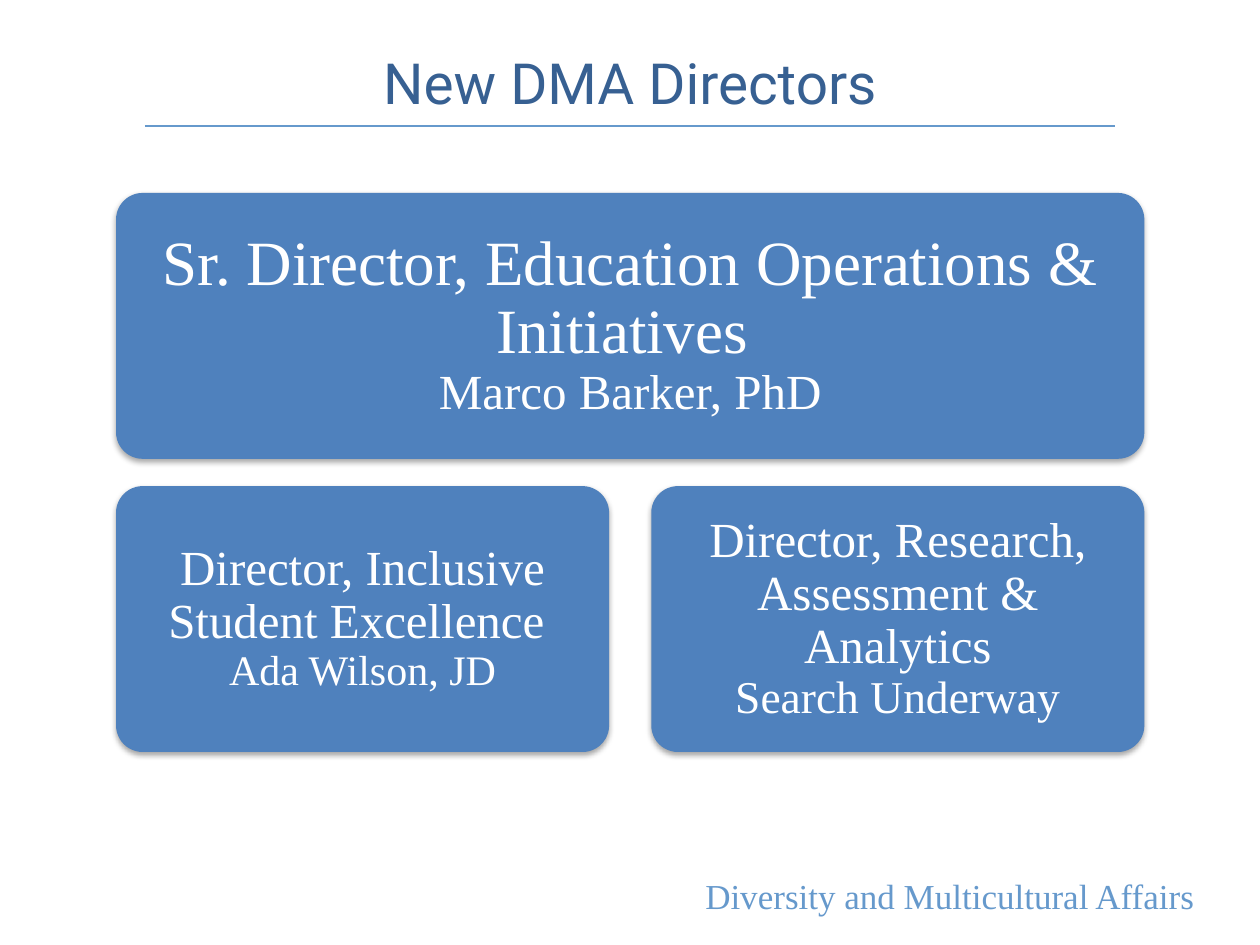
from lxml import etree
from pptx import Presentation
from pptx import util as u
from pptx.dml.color import RGBColor
from pptx.enum import shapes, text
from pptx.oxml import parse_xml
from pptx.oxml.ns import nsdecls, qn

BLUE = RGBColor(0x4F, 0x81, 0xBD)
DARK_BLUE = RGBColor(0x37, 0x60, 0x92)
LIGHT_BLUE = RGBColor(0x66, 0x99, 0xCC)
WHITE = RGBColor(0xFF, 0xFF, 0xFF)
SERIF, SANS = "Times New Roman", "Roboto"

SHADOW = (
    f'<a:effectLst {nsdecls("a")}>'
    '<a:outerShdw blurRad="40000" dist="23000" dir="5400000" rotWithShape="0">'
    '<a:srgbClr val="000000"><a:alpha val="35000"/></a:srgbClr>'
    '</a:outerShdw></a:effectLst>'
)


class DirectorsSlide:
    """Holds the style and the slide being built."""

    def __init__(self, presentation):
        self.slide = presentation.slides.add_slide(presentation.slide_layouts[5])

    def format_frame(self, frame, inset, **values):
        settings = {
            "word_wrap": True,
            "auto_size": text.MSO_AUTO_SIZE.NONE,
            "vertical_anchor": text.MSO_ANCHOR.MIDDLE,
            **dict.fromkeys(("margin_left", "margin_right", "margin_top", "margin_bottom"), u.Cm(inset)),
            **values,
        }
        for name, value in settings.items():
            setattr(frame, name, value)

    def add_run(self, paragraph, wording, size, color, font=SERIF):
        run = paragraph.add_run()
        run.text = wording
        for name, value in {"name": font, "size": u.Pt(size)}.items():
            setattr(run.font, name, value)
        run.font.color.rgb = color

    def title(self, wording, left, top, width, height):
        shape = self.slide.shapes.title
        position = {"left": left, "top": top, "width": width, "height": height}
        for name, value in position.items():
            setattr(shape, name, u.Cm(value))
        self.format_frame(shape.text_frame, 0.13)
        paragraph = shape.text_frame.paragraphs[0]
        paragraph.alignment = text.PP_ALIGN.CENTER
        self.add_run(paragraph, wording, 32.4, DARK_BLUE, SANS)

    def rule(self, left, right, top):
        line = self.slide.shapes.add_connector(
            shapes.MSO_CONNECTOR.STRAIGHT, u.Cm(left), u.Cm(top), u.Cm(right), u.Cm(top))
        line.line.color.rgb = LIGHT_BLUE
        line.line.width = u.Pt(0.75)
        etree.SubElement(line._element.spPr, qn("a:effectLst"))

    def footer(self, wording, left, top, width, height):
        box = self.slide.shapes.add_textbox(*map(u.Cm, (left, top, width, height)))
        self.format_frame(box.text_frame, 0.1, margin_right=u.Cm(0.25),
                          vertical_anchor=text.MSO_ANCHOR.TOP,
                          auto_size=text.MSO_AUTO_SIZE.SHAPE_TO_FIT_TEXT)
        paragraph = box.text_frame.paragraphs[0]
        paragraph.alignment = text.PP_ALIGN.RIGHT
        self.add_run(paragraph, wording, 20, LIGHT_BLUE)

    def card(self, role, role_size, person, person_size, left, top, width, height, inset):
        shape = self.slide.shapes.add_shape(
            shapes.MSO_SHAPE.ROUNDED_RECTANGLE, *map(u.Cm, (left, top, width, height)))
        shape.adjustments[0] = 0.1
        shape.fill.solid()
        shape.fill.fore_color.rgb = BLUE
        shape.line.fill.background()
        shape._element.spPr.append(parse_xml(SHADOW))

        self.format_frame(shape.text_frame, inset)
        paragraph = shape.text_frame.paragraphs[0]
        for name, value in {"alignment": text.PP_ALIGN.CENTER, "line_spacing": 0.9}.items():
            setattr(paragraph, name, value)
        self.add_run(paragraph, role, role_size, WHITE)
        paragraph.add_line_break()
        self.add_run(paragraph, person, person_size, WHITE)


def main():
    presentation = Presentation()
    presentation.slide_width, presentation.slide_height = u.Cm(25.4), u.Cm(19.05)
    slide = DirectorsSlide(presentation)

    # Heading and footer
    slide.rule(2.92, 22.48, 2.54)
    slide.footer("Diversity and Multicultural Affairs", 13.87, 17.53, 10.46, 1.11)
    slide.title("New DMA Directors", 1.27, 0.76, 22.86, 1.78)

    # Senior director across the top
    left, top, width, height = 2.34, 3.89, 20.73, 5.36
    row_gap, column_gap = 0.55, 0.85
    slide.card("Sr. Director, Education Operations & Initiatives ", 36,
               "Marco Barker, PhD", 28, left, top, width, height, 0.38)

    # Directors side by side below
    directors = [
        ("Director, Inclusive Student Excellence ", 28, "Ada Wilson, JD", 24),
        ("Director, Research, Assessment & Analytics", 28, "Search Underway", 26),
    ]
    card_width = (width - column_gap) / 2
    for column, director in enumerate(directors):
        slide.card(*director, left + column * (card_width + column_gap),
                   top + height + row_gap, card_width, height, 0.3)

    presentation.save("out.pptx")


if __name__ == "__main__":
    main()
